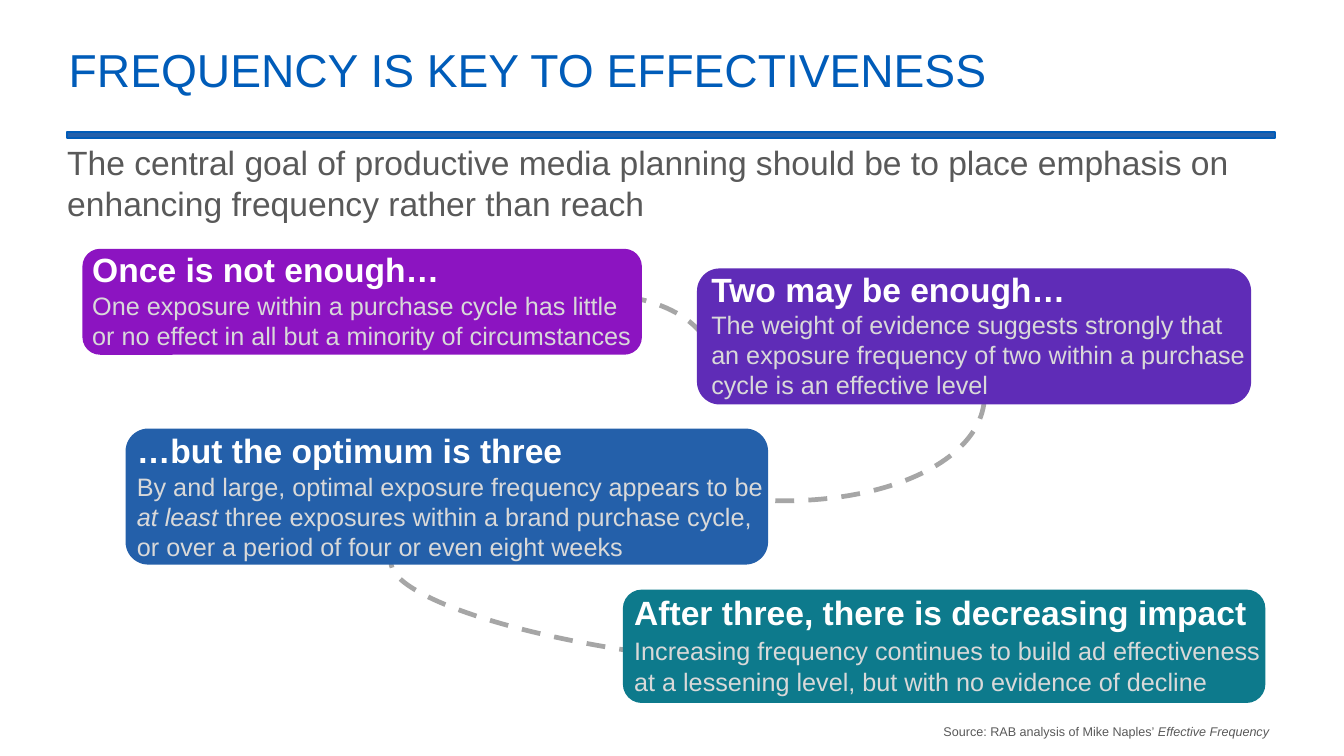
from pptx import Presentation
from pptx import util as u
from pptx.dml.color import RGBColor
from pptx.enum import dml, shapes, text

BLUE, GREY, PALE, WHITE = "005CB9", "595959", "D9D9D9", "FFFFFF"


def rgb(value):
    return RGBColor.from_string(value)


def add_runs(tf, runs, size, color, bold=False):
    """Fill the first paragraph with (text, italic) runs."""
    p = tf.paragraphs[0]
    for words, italic in runs:
        r = p.add_run()
        r.text = words
        r.font.name = "Arial"
        r.font.size = u.Pt(size)
        r.font.bold = bold
        r.font.italic = italic
        r.font.color.rgb = rgb(color)
    return p


prs = Presentation()
prs.slide_width, prs.slide_height = u.Cm(45.16), u.Cm(25.4)
s = prs.slides.add_slide(prs.slide_layouts[5])

# Title
sp = s.shapes.title
sp.left, sp.top, sp.width, sp.height = u.Cm(1.9), u.Cm(0.71), u.Cm(42.95), u.Cm(3.25)
tf = sp.text_frame
tf.word_wrap = True
tf.vertical_anchor = text.MSO_ANCHOR.MIDDLE
tf.margin_left = tf.margin_right = u.Cm(0.41)
tf.margin_top = tf.margin_bottom = u.Cm(0.2)
p = add_runs(tf, [("FREQUENCY IS KEY TO EFFECTIVENESS", False)], 44, BLUE)
p.alignment = text.PP_ALIGN.LEFT

# Rule under the title
sp = s.shapes.add_shape(shapes.MSO_SHAPE.RECTANGLE, u.Cm(2.26), u.Cm(4.45), u.Cm(40.59), u.Cm(0.2))
sp.shadow.inherit = False
sp.fill.solid()
sp.fill.fore_color.rgb = rgb("2460AA")
sp.line.color.rgb = rgb(BLUE)
sp.line.width = u.Pt(2)

# Dashed arcs between the cards: left, top, width, height, rotation, end angle
arcs = [
    (17.81, 9.96, 6.07, 3.43, 8.4, 0),
    (21.49, 5.18, 7.95, 15.27, 94.8, 0),
    (13.06, 18.24, 17.27, 3.68, 188.1, 0.28),
]
for *box, rotation, end in arcs:
    sp = s.shapes.add_shape(shapes.MSO_SHAPE.ARC, *map(u.Cm, box))
    sp.shadow.inherit = False
    sp.rotation = rotation
    sp.adjustments[0], sp.adjustments[1] = 162, end
    sp.fill.background()
    sp.line.color.rgb = rgb("A6A6A6")
    sp.line.width = u.Pt(4.5)
    sp.line.dash_style = dml.MSO_LINE.DASH

# Cards: box, colour, text left and width, heading top and words, body top and runs
cards = [
    ((2.77, 8.36, 18.8, 3.56), "8C14C1", 3.1, 18.62, 8.36, "Once is not enough…", 9.75,
     [("One exposure within a purchase cycle has little or no effect in all but "
       "a minority of circumstances", False)]),
    ((23.42, 9.02, 18.62, 4.57), "5F2CB7", 23.9, 18.21, 9.02, "Two may be enough…", 10.39,
     [("The weight of evidence suggests strongly that an exposure frequency of two "
       "within a purchase cycle is an effective level", False)]),
    ((4.22, 14.4, 21.59, 4.57), "2460AA", 4.6, 21.16, 14.43, "…but the optimum is three", 15.82,
     [("By and large, optimal exposure frequency appears to be ", False),
      ("at least ", True),
      ("three exposures within a brand purchase cycle, or over a period of four "
       "or even eight weeks", False)]),
    ((20.93, 19.81, 21.59, 3.81), "0D7A8C", 21.31, 21.16, 19.89,
     "After three, there is decreasing impact", 21.36,
     [("Increasing frequency continues to build ad effectiveness at a lessening level, "
       "but with no evidence of decline", False)]),
]

# Text blocks: left, top, width, height, runs, size, colour, bold
blocks = [(2.26, 4.78, 40.21, 2.8,
           [("The central goal of productive media planning should be to place emphasis on "
             "enhancing frequency rather than reach", False)], 32, GREY, False)]
for box, color, left, width, head_top, head, body_top, body in cards:
    sp = s.shapes.add_shape(shapes.MSO_SHAPE.ROUNDED_RECTANGLE, *map(u.Cm, box))
    sp.shadow.inherit = False
    sp.fill.solid()
    sp.fill.fore_color.rgb = rgb(color)
    sp.line.fill.background()
    blocks.append((left, head_top, width, 1.17, [(head, False)], 32, WHITE, True))
    blocks.append((left, body_top, width, 2.13, body, 24, PALE, False))

# Introduction, card headings and card bodies
for *box, runs, size, color, bold in blocks:
    tf = s.shapes.add_textbox(*map(u.Cm, box)).text_frame
    tf.word_wrap = True
    tf.margin_left = tf.margin_top = tf.margin_right = tf.margin_bottom = 0
    add_runs(tf, runs, size, color, bold)

# Source
tf = s.shapes.add_textbox(u.Cm(29.13), u.Cm(24.21), u.Cm(13.77), u.Cm(0.76)).text_frame
tf.word_wrap = True
p = add_runs(tf, [("Source: RAB analysis of Mike Naples’ ", False),
                  ("Effective Frequency", True)], 12, GREY)
p.alignment = text.PP_ALIGN.RIGHT

prs.save("out.pptx")
